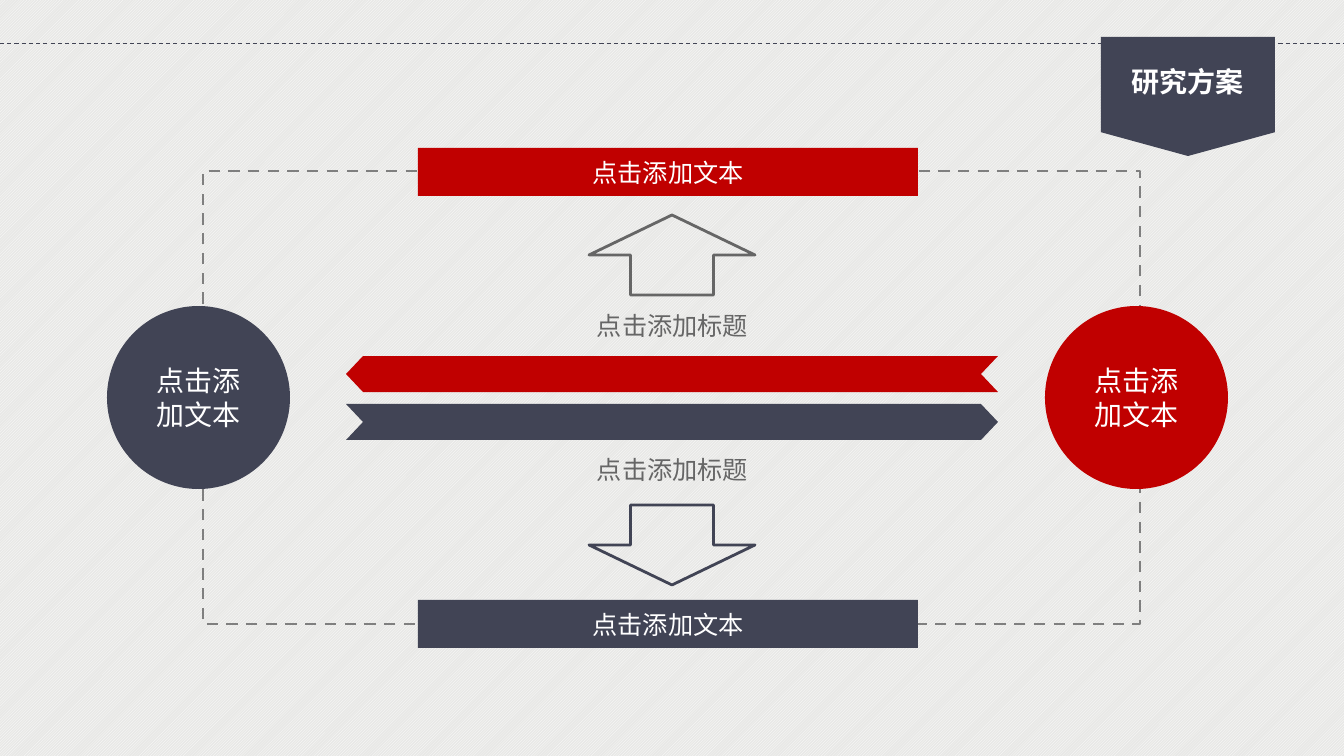
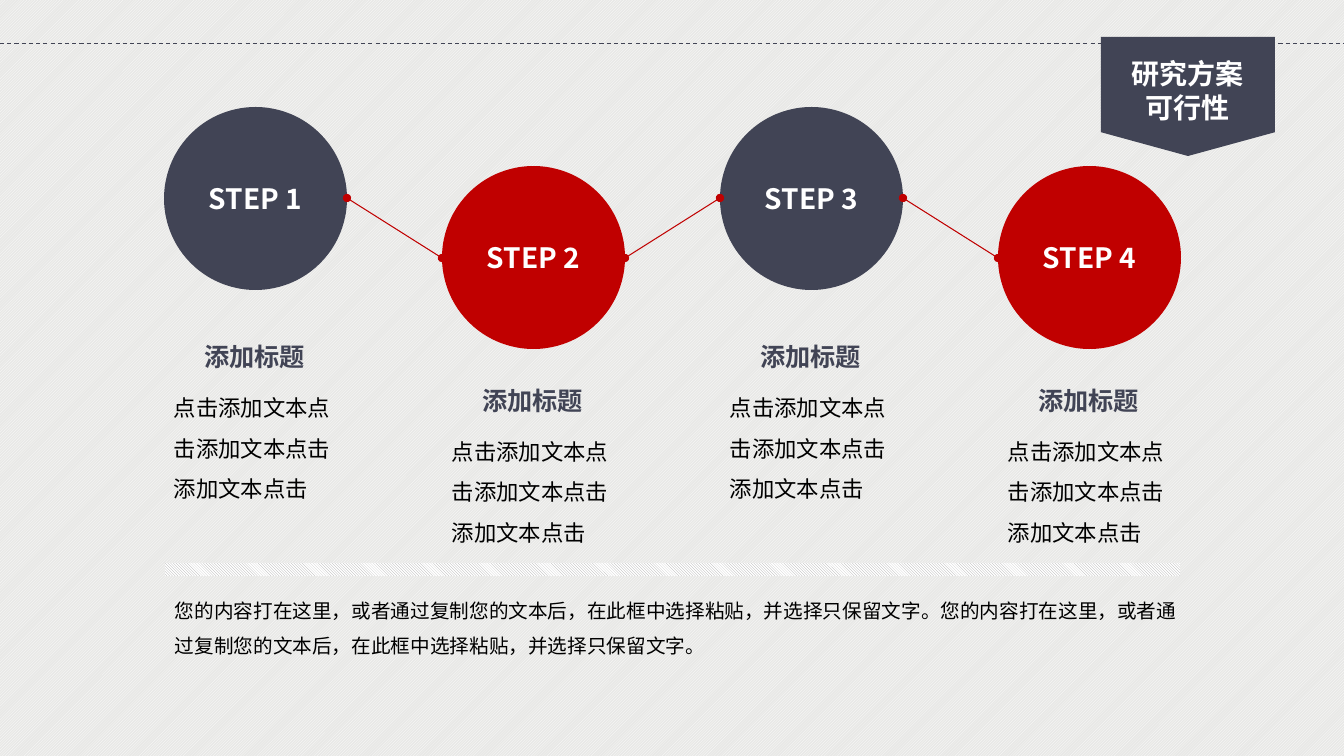
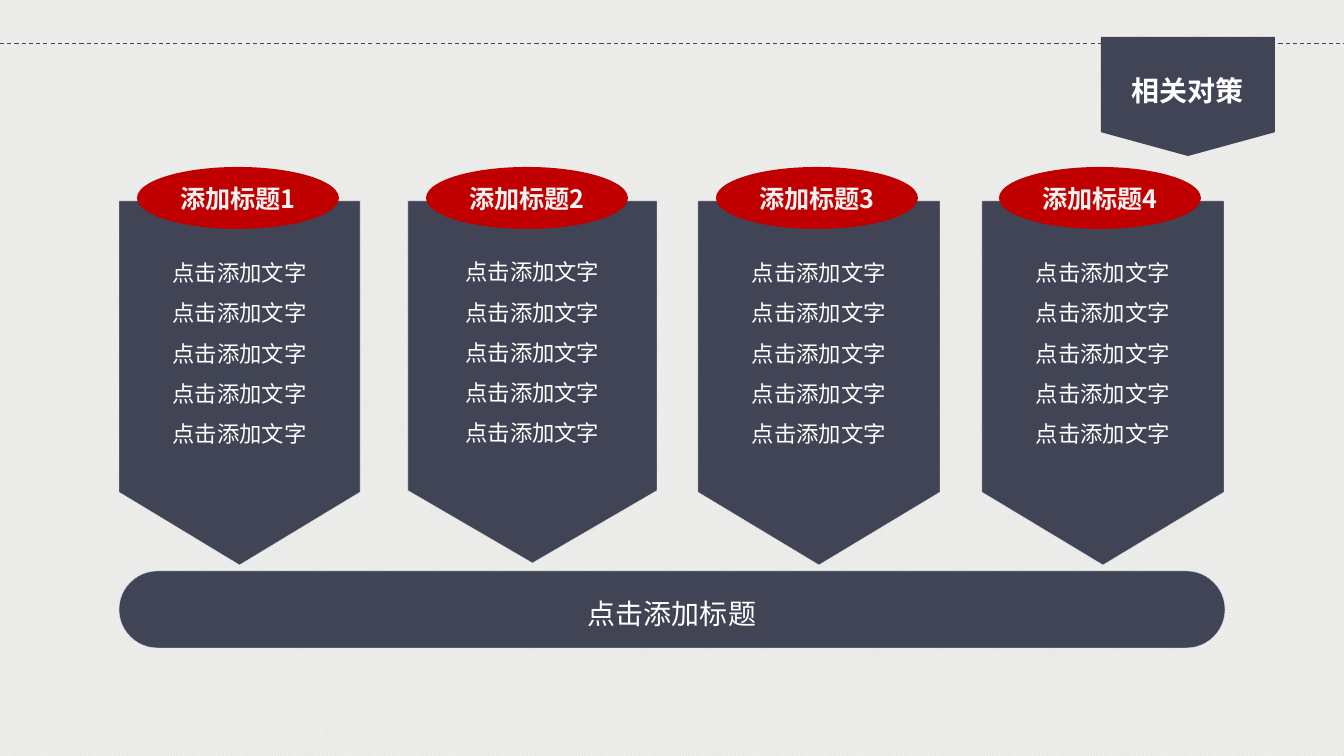
"""Build three slides on a research plan, its steps and its measures."""
from lxml import etree
from pptx import Presentation
from pptx.dml.color import RGBColor
from pptx.enum import dml, shapes, text
from pptx.oxml import ns
from pptx.util import Pt

SCALE = 12192000 / 1344
WIDE, HIGH = 1344, 756
FONT = "Noto Sans CJK SC"
NAVY, RED, GREY, WHITE = "414455", "C00000", "666666", "FFFFFF"
KIND = shapes.MSO_SHAPE
DASH = dml.MSO_LINE.DASH
MID = {"vertical_anchor": text.MSO_ANCHOR.MIDDLE}
GROW = {"auto_size": text.MSO_AUTO_SIZE.SHAPE_TO_FIT_TEXT}
LEFT, MIDDLE = text.PP_ALIGN.LEFT, text.PP_ALIGN.CENTER


def px(*nums):
    """Turn pixels into EMU."""
    return [round(num * SCALE) for num in nums]


def tint(color, code):
    """Set a colour from a hex string."""
    color.rgb = RGBColor.from_string(code)


def apply(target, values):
    """Set each attribute named in a dict."""
    for key, value in values.items():
        setattr(target, key, value)


def hatch(fill, kind, front, back):
    """Give a fill a two-colour pattern."""
    fill.patterned()
    fill.pattern = kind
    tint(fill.fore_color, front)
    tint(fill.back_color, back)


def stroke(line, code, width, dash=None):
    """Style a line."""
    tint(line.color, code)
    apply(line, {"width": Pt(width), "dash_style": dash})


def paint(shape, fill=None, line=None):
    """Style the fill and outline of a shape."""
    shape.shadow.inherit = False
    if fill:
        shape.fill.solid()
        tint(shape.fill.fore_color, fill)
    else:
        shape.fill.background()
    if line:
        stroke(shape.line, *line)
    else:
        shape.line.fill.background()
    return shape


def write(shape, lines, size, code=WHITE, bold=False, frame=MID, **para):
    """Fill a shape with styled paragraphs, centred by default."""
    body = shape.text_frame
    apply(body, {"word_wrap": True, **frame})
    body.text = "\n".join(lines)
    for part in body.paragraphs:
        apply(part, {"alignment": MIDDLE, **para})
        for run in part.runs:
            apply(run.font, {"name": FONT, "size": Pt(size), "bold": bold})
            tint(run.font.color, code)
            props = run.font.fill._xPr
            props.find(ns.qn("a:latin")).addnext(
                etree.Element(ns.qn("a:ea"), typeface=FONT))


def form(slide, kind, box, fill=None, line=None):
    """Add a preset shape."""
    return paint(slide.shapes.add_shape(kind, *px(*box)), fill, line)


def label(slide, box, lines, size, code, frame=GROW, **look):
    """Add a text box."""
    write(slide.shapes.add_textbox(*px(*box)), lines, size, code,
          frame=frame, **look)


def link(slide, ends, code, dash=None, dots=False):
    """Add a thin straight line, with round ends on request."""
    line = slide.shapes.add_connector(shapes.MSO_CONNECTOR.STRAIGHT, *px(*ends))
    stroke(line.line, code, 0.75, dash)
    props = line.element.spPr
    if dots:
        for end in ("a:headEnd", "a:tailEnd"):
            etree.SubElement(props.find(ns.qn("a:ln")), ns.qn(end), type="oval")
    etree.SubElement(props, ns.qn("a:effectLst"))


def ribbon(slide, points, fill):
    """Add a closed outline."""
    maker = slide.shapes.build_freeform(*points[0], scale=SCALE)
    maker.add_line_segments(points[1:], close=True)
    paint(maker.convert_to_shape(), fill)


def start(deck, title, top, high=44):
    """Add a slide with its backdrop, dashed rule and title badge."""
    slide = deck.slides.add_slide(deck.slide_layouts[6])
    hatch(slide.background.fill, dml.MSO_PATTERN.LIGHT_UPWARD_DIAGONAL,
          WHITE, "E8E8E6")
    link(slide, (0, 44, WIDE, 44), NAVY, DASH)
    form(slide, KIND.FLOWCHART_OFFPAGE_CONNECTOR, (1101, 37, 174, 119), NAVY)
    label(slide, (1121, top, 133, high), title, 20, WHITE, bold=True,
          frame={**GROW, "word_wrap": False})
    return slide


def plan(deck):
    """Build the loop of four items around two ribbons."""
    slide = start(deck, ["研究方案"], 60)
    form(slide, KIND.RECTANGLE, (203, 171, 937, 453), line=("7F7F7F", 2, DASH))
    for left, fill in ((107, NAVY), (1045, RED)):
        disc = form(slide, KIND.OVAL, (left, 306, 183, 183), fill)
        write(disc, ["点击添加文本"], 20)
    for top in (305, 449):
        label(slide, (586, top, 173, 40), ["点击添加标题"], 18, GREY,
              frame={**GROW, "word_wrap": False})
    form(slide, KIND.UP_ARROW, (589, 215, 166, 80), line=(GREY, 2))
    form(slide, KIND.DOWN_ARROW, (589, 505, 166, 80), line=(NAVY, 2))
    for top, fill in ((600, NAVY), (148, RED)):
        bar = form(slide, KIND.RECTANGLE, (418, top, 500, 48), fill)
        write(bar, ["点击添加文本"], 18)
    edge = [(346, 404), (981, 404), (998, 422), (981, 440), (346, 440), (363, 422)]
    ribbon(slide, edge, NAVY)
    ribbon(slide, [(WIDE - x, y - 48) for x, y in edge], RED)


def steps(deck):
    """Build the zigzag of four steps with captions."""
    slide = start(deck, ["研究方案", "可行性"], 52, 78)
    size, pitch, first = 183, 278, 164
    spots = [(first + pitch * i, i % 2) for i in range(4)]
    mids = [198 + 60 * low for _, low in spots]
    for i, (left, low) in enumerate(spots):
        disc = form(slide, KIND.OVAL, (left, 107 + 59 * low, size, size),
                    RED if low else NAVY)
        write(disc, [f"STEP {i + 1}"], 20, bold=True)
    for (left, _), here, there in zip(spots, mids, mids[1:]):
        link(slide, (left + size, here, left + pitch, there), RED, dots=True)
    for left, low in spots:
        drop = 44 * low
        label(slide, (left, 324 + drop, 181, 50), ["添加标题"], 18, NAVY,
              frame={**GROW, **MID}, bold=True, line_spacing=1.5)
        label(slide, (left, 376 + drop, 181, 132),
              ["点击添加文本点击添加文本点击添加文本点击"], 16, "000000",
              alignment=LEFT, line_spacing=1.5)
    note = "您的内容打在这里，或者通过复制您的文本后，在此框中选择粘贴，并选择只保留文字。"
    label(slide, (165, 582, 1031, 78), [note * 2], 14, "000000",
          alignment=LEFT, line_spacing=1.5)
    strip = form(slide, KIND.RECTANGLE, (165, 563, 1015, 13))
    hatch(strip.fill, dml.MSO_PATTERN.DARK_DOWNWARD_DIAGONAL, "A6A6A6", WHITE)


def means(deck):
    """Build the four headed columns over a base bar."""
    slide = start(deck, ["相关对策"], 69)
    cols = ((119, 241, 364, 137), (408, 249, 362, 426),
            (698, 242, 364, 716), (982, 242, 364, 999))
    for i, (left, wide, high, head) in enumerate(cols, 1):
        col = form(slide, KIND.FLOWCHART_OFFPAGE_CONNECTOR,
                   (left, 201, wide, high), NAVY, ("EAEAEA", 0.25))
        write(col, ["点击添加文字"] * 5, 16, line_spacing=1.5)
        cap = form(slide, KIND.OVAL, (head, 167, 202, 62), RED)
        write(cap, [f"添加标题{i}"], 18, "F2F2F2", bold=True)
    base = form(slide, KIND.ROUNDED_RECTANGLE, (119, 571, 1106, 77), NAVY,
                ("D4E4FF", 0.25))
    base.adjustments[0] = 0.5
    write(base, ["点击添加标题"], 20, line_spacing=1.2,
          space_before=Pt(6), space_after=Pt(6))


def main():
    """Build and save the deck."""
    deck = Presentation()
    deck.slide_width, deck.slide_height = px(WIDE, HIGH)
    for build in (plan, steps, means):
        build(deck)
    deck.save("out.pptx")


if __name__ == "__main__":
    main()
